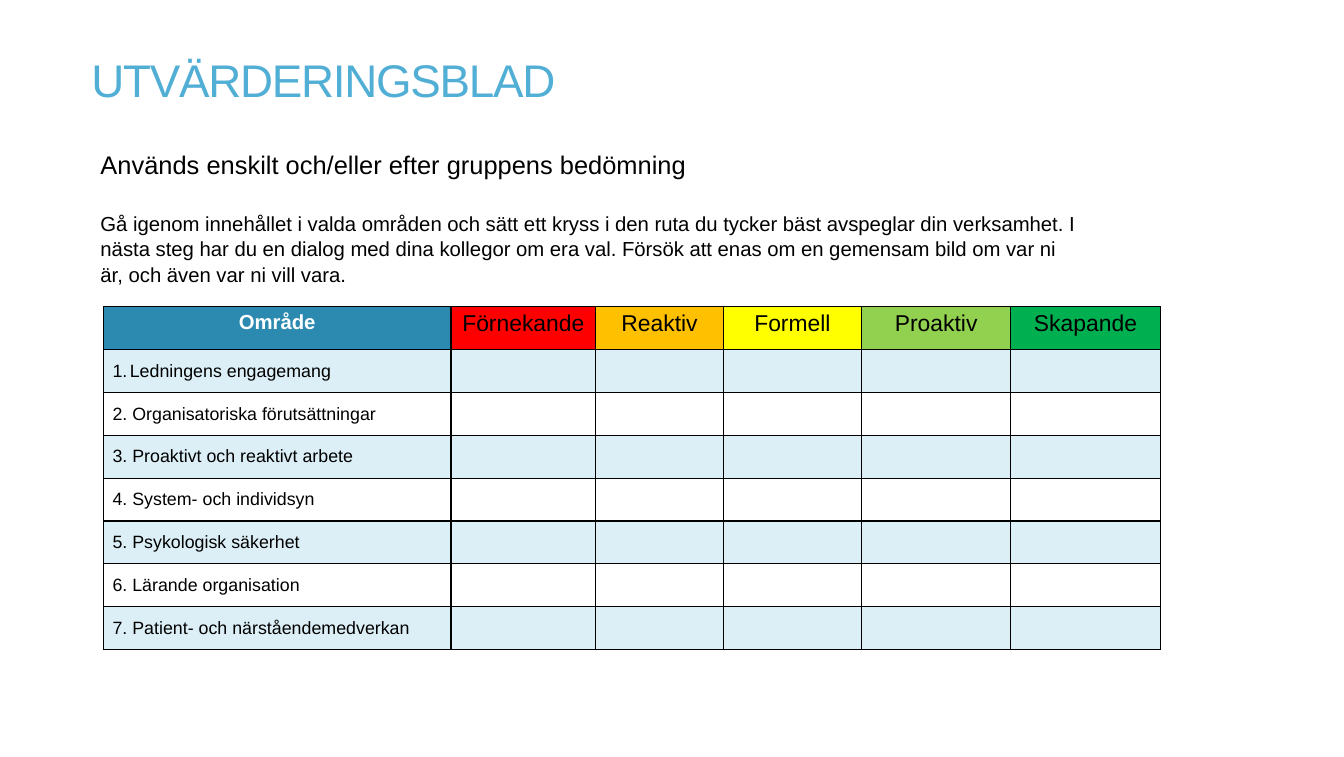
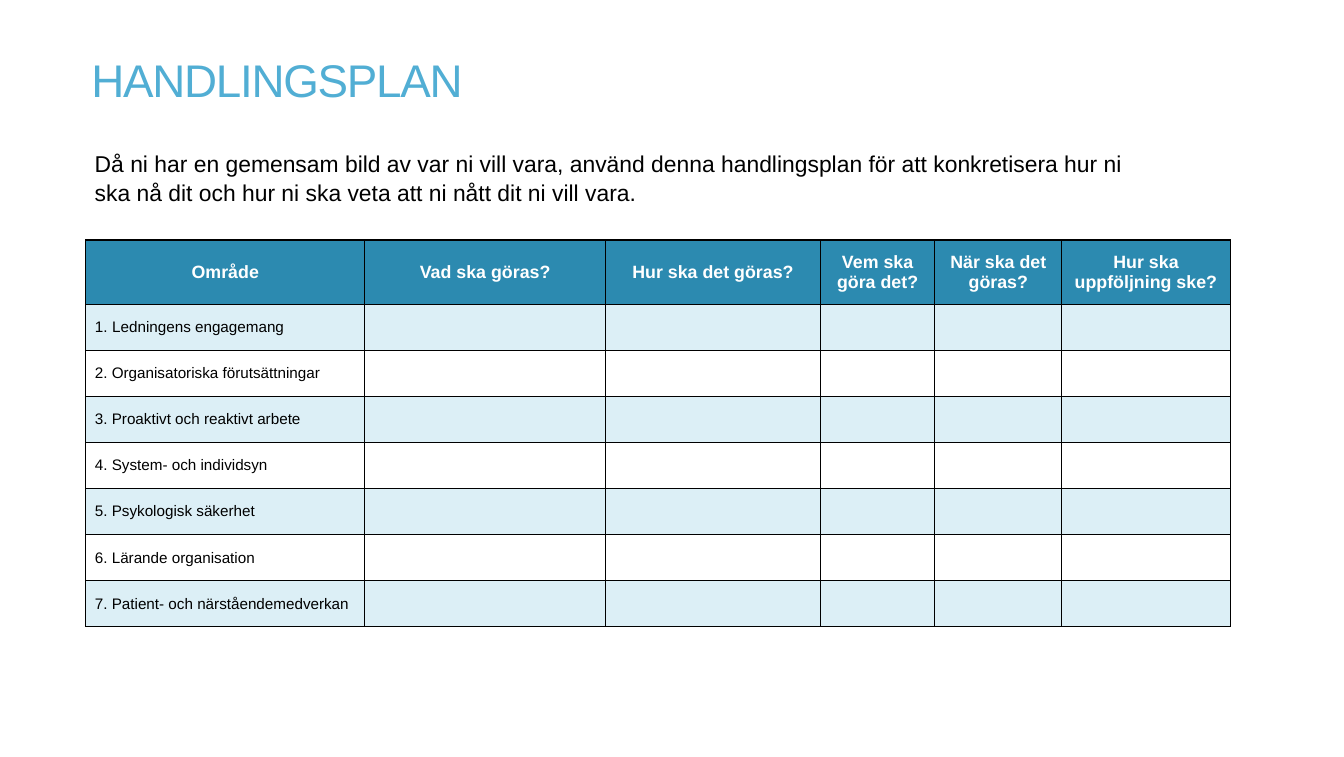
from pptx import Presentation
from pptx.dml.color import RGBColor
from pptx.enum.text import MSO_ANCHOR, MSO_AUTO_SIZE, PP_ALIGN
from pptx.oxml.ns import qn
from pptx.util import Cm, Pt
from lxml import etree

TOP, MIDDLE = MSO_ANCHOR.TOP, MSO_ANCHOR.MIDDLE
LEFT, CENTER = PP_ALIGN.LEFT, PP_ALIGN.CENTER
NO_AUTOFIT = MSO_AUTO_SIZE.NONE
TITLE_ONLY = 5

# Content shared by both tables
AREAS = [
    "Ledningens engagemang",
    "Organisatoriska förutsättningar",
    "Proaktivt och reaktivt arbete",
    "System- och individsyn",
    "Psykologisk säkerhet",
    "Lärande organisation",
    "Patient- och närståendemedverkan",
]

LEVELS = [
    ("Förnekande", "FF0000"),
    ("Reaktiv", "FFC000"),
    ("Formell", "FFFF00"),
    ("Proaktiv", "92D050"),
    ("Skapande", "00B050"),
]

PLAN_QUESTIONS = [
    "Vad ska göras?",
    "Hur ska det göras?",
    "Vem ska göra det?",
    "När ska det göras?",
    "Hur ska uppföljning ske?",
]


def rgb(hex_string):
    return RGBColor.from_string(hex_string)


class Deck:
    FONT = "Arial"
    TITLE, HEADER, BAND = "51AED4", "2C8AB0", "DCEFF6"
    BLACK, WHITE = "000000", "FFFFFF"

    def __init__(self, width, height):
        self.prs = Presentation()
        self.prs.slide_width, self.prs.slide_height = Cm(width), Cm(height)
        self.slide = None

    def style(self, paragraph, size, color=BLACK, bold=False, align=LEFT):
        paragraph.alignment = align
        for run in paragraph.runs:
            font = run.font
            font.name, font.size, font.bold = self.FONT, Pt(size), bold
            font.color.rgb = rgb(color)

    def add_slide(self, title):
        self.slide = self.prs.slides.add_slide(self.prs.slide_layouts[TITLE_ONLY])
        heading = self.slide.shapes.title
        heading.left, heading.top = Cm(2.54), Cm(1.19)
        heading.width, heading.height = Cm(32.44), Cm(2.24)
        frame = heading.text_frame
        frame.text = title
        frame.auto_size = NO_AUTOFIT
        frame.vertical_anchor = TOP
        frame.margin_left = frame.margin_right = 0
        frame.margin_top = frame.margin_bottom = 0
        paragraph = frame.paragraphs[0]
        paragraph.line_spacing = Pt(50)
        self.style(paragraph, 36, self.TITLE)
        paragraph.runs[0].font._element.set("spc", "-100")

    def add_text(self, left, top, width, height, lines, gap=0):
        """Add paragraphs given as (text, size), with a gap in points between them."""
        box = self.slide.shapes.add_textbox(Cm(left), Cm(top), Cm(width), Cm(height))
        frame = box.text_frame
        frame.word_wrap = True
        frame.text = "\n".join(text for text, _ in lines)
        for index, (paragraph, (_, size)) in enumerate(zip(frame.paragraphs, lines)):
            paragraph.line_spacing = 1.05
            paragraph.space_before = Pt(gap if index else 0)
            self.style(paragraph, size)

    def add_borders(self, cell):
        properties = cell._tc.get_or_add_tcPr()
        for side in ("lnL", "lnR", "lnT", "lnB"):
            line = etree.SubElement(properties, qn(f"a:{side}"), w=str(Pt(1)))
            fill = etree.SubElement(line, qn("a:solidFill"))
            etree.SubElement(fill, qn("a:srgbClr"), val=self.BLACK)

    def fill_header(self, cell, text, fill, size, color, bold, anchor):
        cell.text = text
        cell.vertical_anchor = anchor
        self.style(cell.text_frame.paragraphs[0], size, color, bold, CENTER)
        cell.fill.solid()
        cell.fill.fore_color.rgb = rgb(fill)

    def fill_area(self, cell, number, area, size):
        # The first area is auto-numbered, the rest carry typed numbers
        cell.text = area if number == 1 else f"{number}. {area}"
        cell.vertical_anchor = MIDDLE
        paragraph = cell.text_frame.paragraphs[0]
        self.style(paragraph, size)
        properties = paragraph._p.get_or_add_pPr()
        properties.set("marL", str(Cm(0.48)))
        properties.set("indent", str(-Cm(0.48)))
        if number == 1:
            etree.SubElement(properties, qn("a:buFont"), typeface="+mj-lt")
            etree.SubElement(properties, qn("a:buAutoNum"), type="arabicPeriod")

    def add_area_table(self, left, top, widths, header_height, row_height,
                       headers, area_size, header_anchor):
        """Add a table of areas; headers are (text, fill, size, color, bold)."""
        height = header_height + row_height * len(AREAS)
        table = self.slide.shapes.add_table(
            len(AREAS) + 1, len(widths),
            Cm(left), Cm(top), Cm(sum(widths)), Cm(height)).table
        for column, width in zip(table.columns, widths):
            column.width = Cm(width)
        for index, row in enumerate(table.rows):
            row.height = Cm(row_height if index else header_height)
            for cell in row.cells:
                self.add_borders(cell)
                cell.fill.solid()
                cell.fill.fore_color.rgb = rgb(self.BAND if index % 2 else self.WHITE)
        for cell, header in zip(table.rows[0].cells, headers):
            self.fill_header(cell, *header, header_anchor)
        for number, area in enumerate(AREAS, start=1):
            self.fill_area(table.cell(number, 0), number, area, area_size)


def add_evaluation(deck):
    deck.add_slide("UTVÄRDERINGSBLAD")
    headers = [("Område", deck.HEADER, 16, deck.WHITE, True)]
    headers += [(level, fill, 18, deck.BLACK, False) for level, fill in LEVELS]
    deck.add_area_table(2.87, 8.51, [9.65, 4.02, 3.54, 3.84, 4.14, 4.15],
                        1.19, 1.19, headers, 14, TOP)
    deck.add_text(2.54, 3.96, 27.61, 4.01, [
        ("Används enskilt och/eller efter gruppens bedömning", 20),
        ("Gå igenom innehållet i valda områden och sätt ett kryss i den ruta du "
         "tycker bäst avspeglar din verksamhet. I nästa steg har du en dialog med "
         "dina kollegor om era val. Försök att enas om en gemensam bild om var ni "
         "är, och även var ni vill vara.", 16),
    ], gap=24)


def add_action_plan(deck):
    deck.add_slide("HANDLINGSPLAN")
    headers = [(text, deck.HEADER, 14, deck.WHITE, True)
               for text in ["Område"] + PLAN_QUESTIONS]
    deck.add_area_table(2.38, 6.66, [7.75, 6.68, 5.97, 3.17, 3.53, 4.67],
                        1.78, 1.28, headers, 12, MIDDLE)
    deck.add_text(2.38, 3.99, 30.02, 1.8, [
        ("Då ni har en gemensam bild av var ni vill vara, använd denna "
         "handlingsplan för att konkretisera hur ni ska nå dit och hur ni ska veta "
         "att ni nått dit ni vill vara.", 18),
    ])


def main():
    deck = Deck(37.31, 21.01)
    add_evaluation(deck)
    add_action_plan(deck)
    deck.prs.save("out.pptx")


if __name__ == "__main__":
    main()
